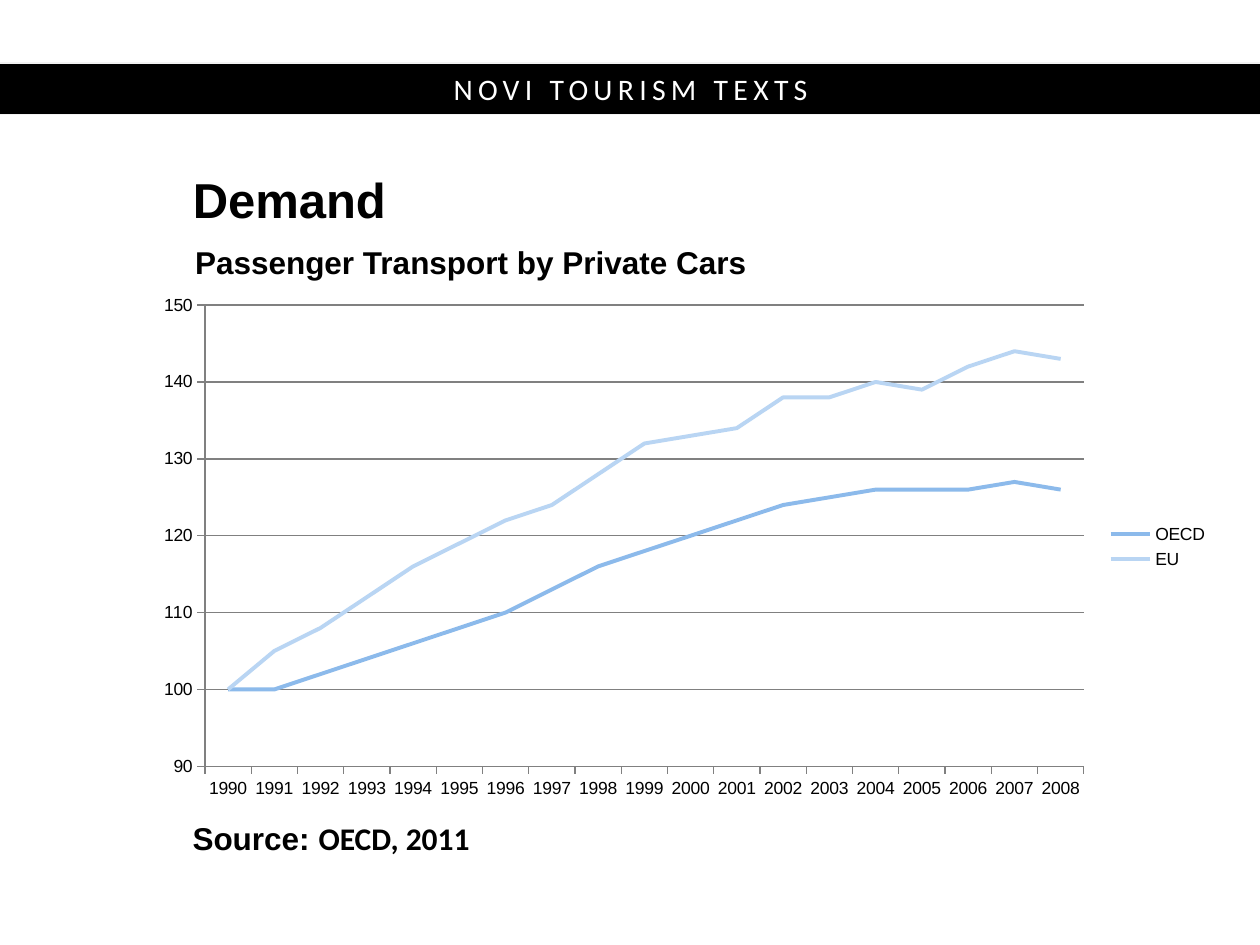
"""Build a slide with a line chart of passenger transport by private cars."""
from dataclasses import dataclass

from lxml import etree
from pptx import Presentation
from pptx.chart.data import CategoryChartData
from pptx.dml.color import RGBColor
from pptx.enum.chart import XL_CHART_TYPE, XL_LEGEND_POSITION, XL_TICK_MARK
from pptx.enum.shapes import MSO_SHAPE
from pptx.enum.text import MSO_ANCHOR, MSO_AUTO_SIZE, PP_ALIGN
from pptx.oxml.ns import qn
from pptx.util import Inches, Pt

LINE_CHART = XL_CHART_TYPE.LINE
LEGEND_RIGHT = XL_LEGEND_POSITION.RIGHT
TICK_OUTSIDE = XL_TICK_MARK.OUTSIDE
RECTANGLE = MSO_SHAPE.RECTANGLE
TOP, MIDDLE = MSO_ANCHOR.TOP, MSO_ANCHOR.MIDDLE
LEFT, CENTER = PP_ALIGN.LEFT, PP_ALIGN.CENTER
NO_AUTOFIT = MSO_AUTO_SIZE.NONE

SLIDE_WIDTH, SLIDE_HEIGHT = Inches(10), Inches(7.5)
BLACK, WHITE, GREY, PALE = "000000", "FFFFFF", "808080", "F2F2F2"


@dataclass(frozen=True)
class Area:
    """Hold a box in percent of the slide's width and height."""
    left: float
    top: float
    width: float
    height: float

    def lengths(self) -> tuple[int, int, int, int]:
        """Return left, top, width and height as slide lengths."""
        return (int(SLIDE_WIDTH * self.left / 100), int(SLIDE_HEIGHT * self.top / 100),
                int(SLIDE_WIDTH * self.width / 100), int(SLIDE_HEIGHT * self.height / 100))


@dataclass(frozen=True)
class Label:
    """Describe one line of text."""
    text: str
    size: float
    color: str = BLACK
    font: str = "Arial"
    bold: bool = True
    align: int = LEFT
    anchor: int = TOP


@dataclass(frozen=True)
class Series:
    """Describe one line of the chart."""
    name: str
    color: str
    values: tuple[int, ...]


BANNER_AREA = Area(-0.8, 6.67, 101.7, 5.47)
TITLE_AREA = Area(14.3, 18, 78.7, 6.4)
SUBTITLE_AREA = Area(14.5, 25.07, 78.7, 5.33)
CHART_AREA = Area(11.3, 30.13, 85.6, 55.47)
SOURCE_AREA = Area(14.3, 86, 78.7, 5.33)
PLOT_SHARES = {"x": 0.058, "y": 0.039, "w": 0.815, "h": 0.88}

BANNER = Label("NOVI TOURISM TEXTS", 17, WHITE, "Calibri", False, CENTER, MIDDLE)
TITLE = Label("Demand", 28, anchor=MIDDLE)
SUBTITLE = Label("Passenger Transport by Private Cars", 18)
SOURCE = Label("Source: ", 18)

YEARS = [str(year) for year in range(1990, 2009)]
SERIES = (
    Series("OECD", "8CBAEB", (100, 100, 102, 104, 106, 108, 110, 113, 116, 118,
                              120, 122, 124, 125, 126, 126, 126, 127, 126)),
    Series("EU", "B9D5F3", (100, 105, 108, 112, 116, 119, 122, 124, 128, 132,
                            133, 134, 138, 138, 140, 139, 142, 144, 143)),
)


def rgb(value: str) -> RGBColor:
    """Turn a hex string into a colour."""
    return RGBColor.from_string(value)


def write(shape, label: Label):
    """Write a label into a shape and return its paragraph."""
    frame = shape.text_frame
    frame.word_wrap = True
    frame.auto_size = NO_AUTOFIT
    frame.vertical_anchor = label.anchor
    paragraph = frame.paragraphs[0]
    paragraph.alignment = label.align
    paragraph.add_run().text = label.text
    font = paragraph.font
    font.size, font.name, font.bold = Pt(label.size), label.font, label.bold
    font.color.rgb = rgb(label.color)
    return paragraph


def add_label(slide, area: Area, label: Label):
    """Add a text box with one label and return its paragraph."""
    return write(slide.shapes.add_textbox(*area.lengths()), label)


def add_banner(slide) -> None:
    """Add the black band with widely spaced text."""
    banner = slide.shapes.add_shape(RECTANGLE, *BANNER_AREA.lengths())
    banner.shadow.inherit = False
    banner.fill.solid()
    banner.fill.fore_color.rgb = rgb(BLACK)
    banner.line.color.rgb = rgb(PALE)
    banner.line.width = Pt(0.75)
    paragraph = write(banner, BANNER)
    paragraph.runs[0].font._element.set("spc", "300")


def add_title(slide) -> None:
    """Move and fill the title placeholder."""
    title = slide.shapes.title
    title.left, title.top, title.width, title.height = TITLE_AREA.lengths()
    write(title, TITLE).line_spacing = Pt(32)


def format_axis(axis) -> None:
    """Give an axis outside ticks, a grey line and small labels."""
    axis.major_tick_mark = TICK_OUTSIDE
    axis.format.line.color.rgb = rgb(GREY)
    axis.format.line.width = Pt(0.75)
    axis.tick_labels.font.size = Pt(10)


def place_plot(chart) -> None:
    """Fix the inner plot area at its shares of the chart."""
    plot_area = chart._chartSpace.chart.plotArea
    for old_layout in plot_area.findall(qn("c:layout")):
        plot_area.remove(old_layout)
    layout = etree.Element(qn("c:layout"))
    plot_area.insert(0, layout)
    manual = etree.SubElement(layout, qn("c:manualLayout"))
    settings = {"layoutTarget": "inner", "xMode": "edge", "yMode": "edge", **PLOT_SHARES}
    for name, value in settings.items():
        etree.SubElement(manual, qn(f"c:{name}")).set("val", str(value))


def add_line_chart(slide) -> None:
    """Add the chart of both series over the years."""
    data = CategoryChartData()
    data.categories = YEARS
    for series in SERIES:
        data.add_series(series.name, series.values)
    chart = slide.shapes.add_chart(LINE_CHART, *CHART_AREA.lengths(), data).chart
    chart.has_title = False
    chart.font.name, chart.font.size = "Arial", Pt(18)
    chart.font.color.rgb = rgb(BLACK)
    chart.has_legend = True
    chart.legend.position = LEGEND_RIGHT
    chart.legend.include_in_layout = False
    chart.legend.font.size = Pt(10)
    for axis in (chart.category_axis, chart.value_axis):
        format_axis(axis)
    value_axis = chart.value_axis
    value_axis.minimum_scale, value_axis.maximum_scale = 90, 150
    value_axis.major_unit = 10
    value_axis.has_major_gridlines = True
    value_axis.major_gridlines.format.line.color.rgb = rgb(GREY)
    value_axis.major_gridlines.format.line.width = Pt(0.75)
    chart.plots[0].vary_by_categories = False
    for line, series in zip(chart.plots[0].series, SERIES):
        line.smooth = False
        line.format.line.color.rgb = rgb(series.color)
        line.format.line.width = Pt(2.25)
    place_plot(chart)


def main() -> None:
    """Build and save the presentation."""
    presentation = Presentation()
    presentation.slide_width, presentation.slide_height = SLIDE_WIDTH, SLIDE_HEIGHT
    slide = presentation.slides.add_slide(presentation.slide_layouts.get_by_name("Title Only"))
    add_banner(slide)
    add_title(slide)
    add_label(slide, SUBTITLE_AREA, SUBTITLE)
    add_line_chart(slide)
    citation = add_label(slide, SOURCE_AREA, SOURCE).add_run()
    citation.text = "OECD, 2011"
    citation.font.name = "Calibri"
    presentation.save("out.pptx")


if __name__ == "__main__":
    main()
